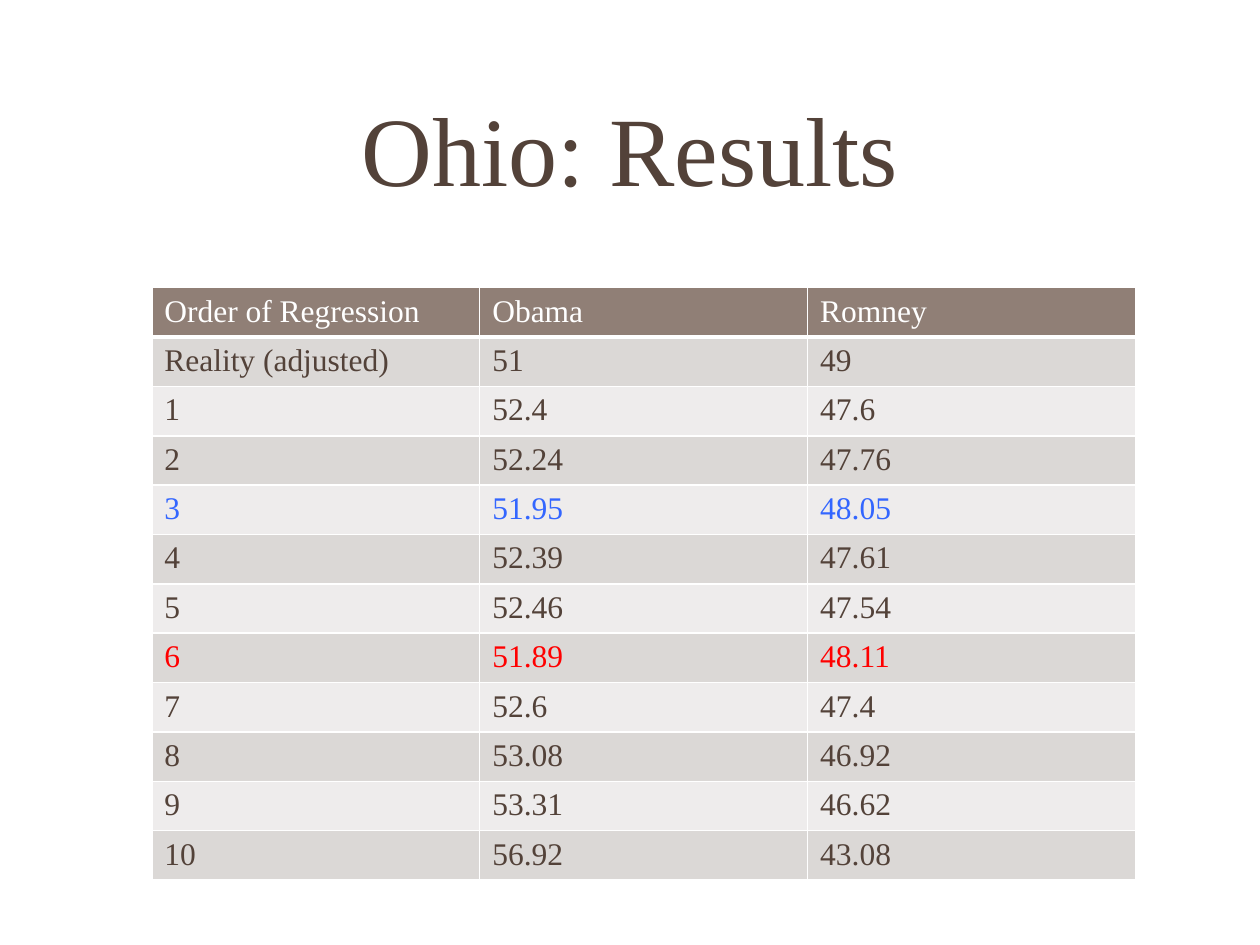
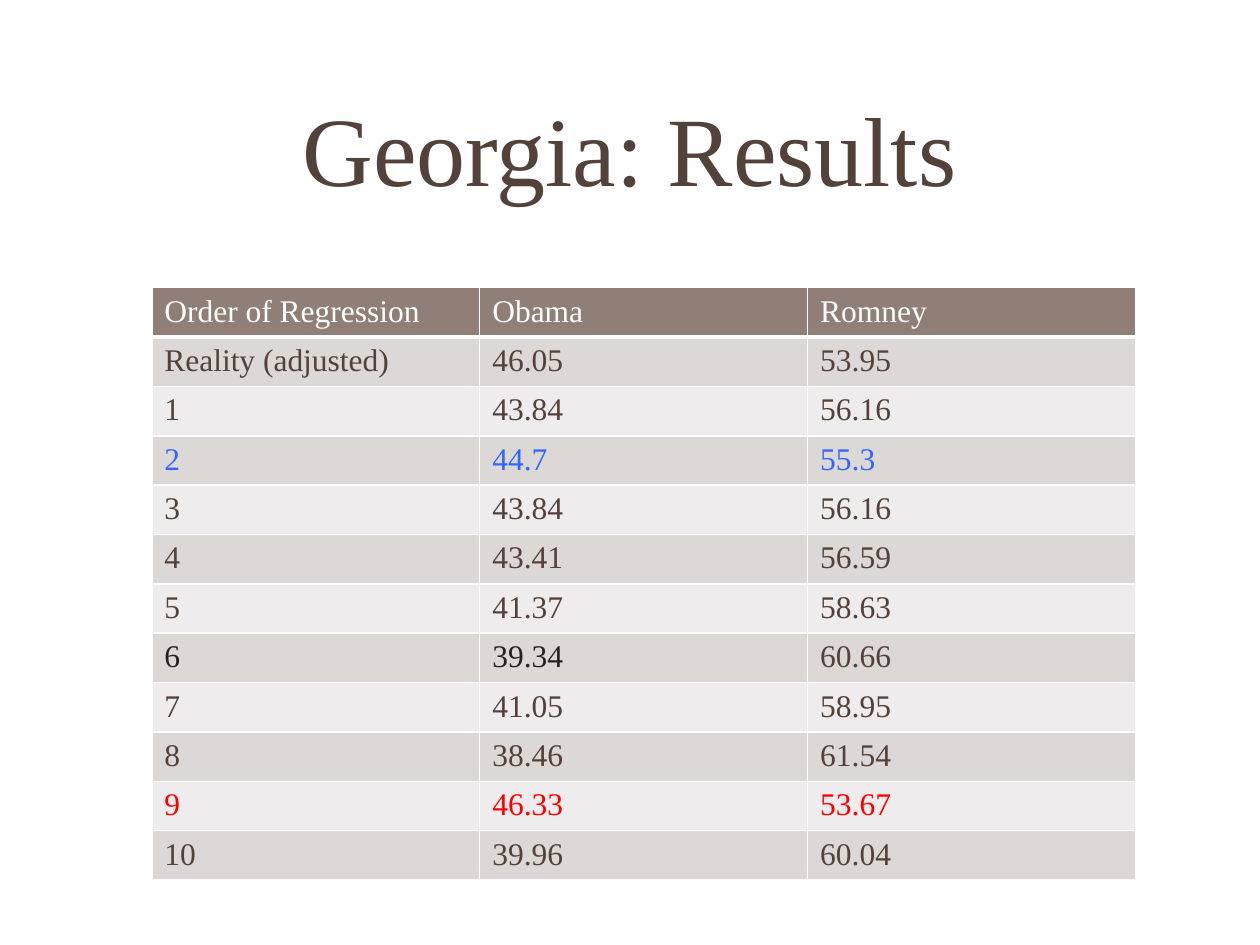
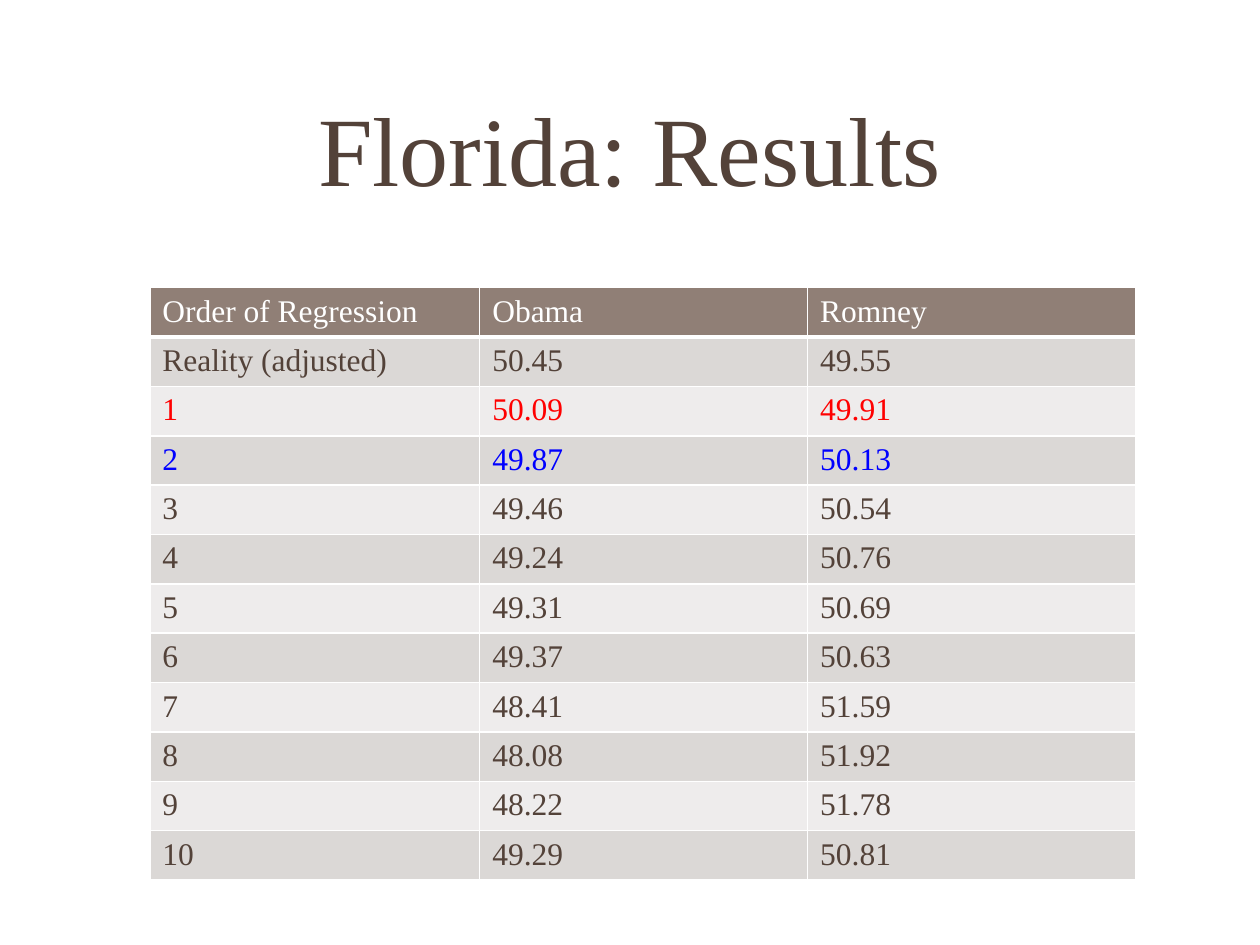
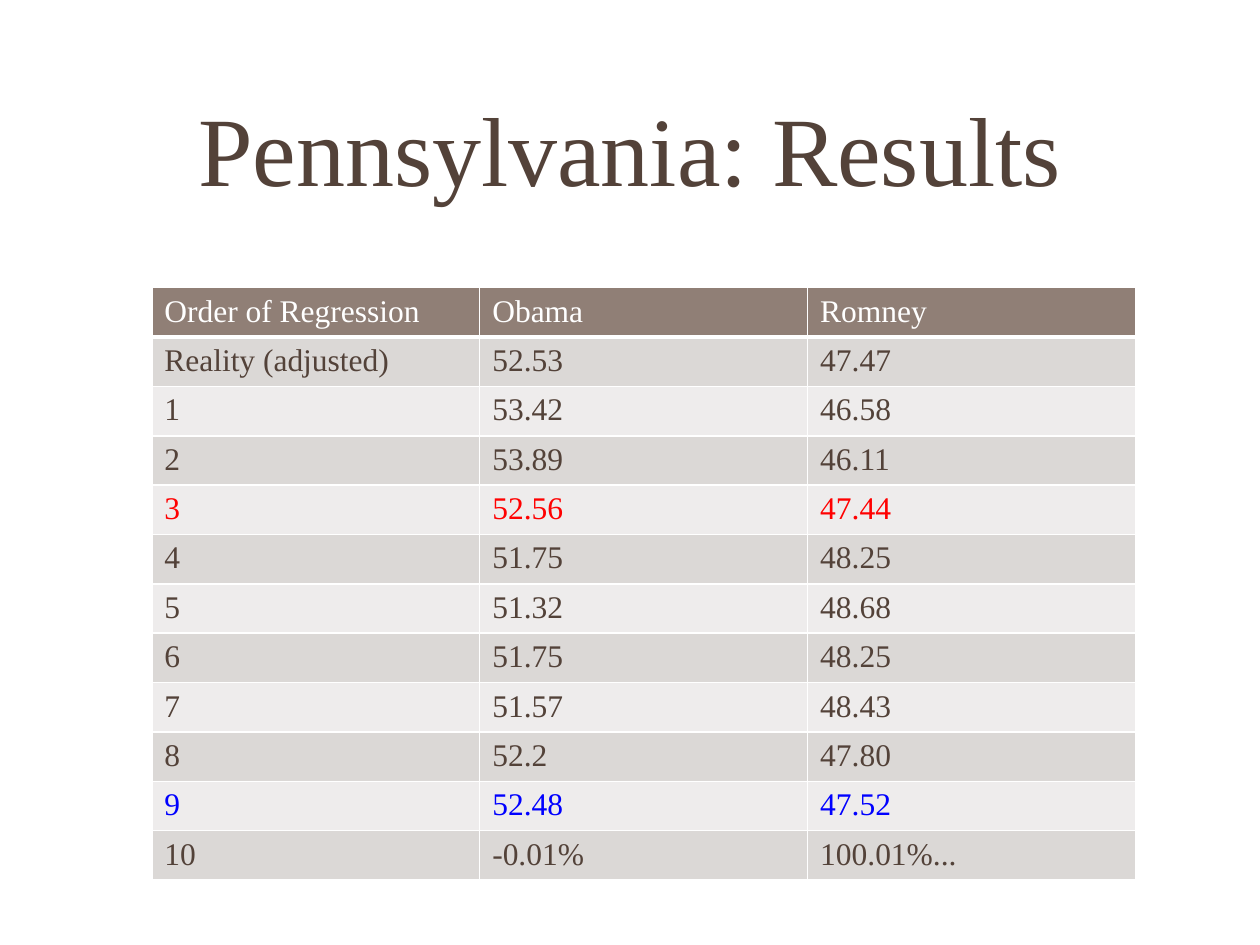
import pptx
import pptx.dml.color
import pptx.enum.text
import pptx.util
from lxml import etree
from pptx.oxml.ns import qn

Cm = pptx.util.Cm
Pt = pptx.util.Pt

COLOURS = {
    "brown": "534239",
    "dark": "2A211D",
    "red": "FF0000",
    "sky": "3366FF",
    "blue": "0000FF",
    "white": "FFFFFF",
    "header": "907F76",
    "odd_row": "DBD8D6",
    "even_row": "EEECEC",
}
FONT = "Times New Roman"
HEADINGS = ("Order of Regression", "Obama", "Romney")
ORDERS = ("Reality (adjusted)", *map(str, range(1, 11)))

STATES = [
    {
        "name": "Ohio",
        "obama": "51 52.4 52.24 51.95 52.39 52.46 51.89 52.6 53.08 53.31 56.92",
        "romney": "49 47.6 47.76 48.05 47.61 47.54 48.11 47.4 46.92 46.62 43.08",
        "marks": {"3": ("sky",) * 3, "6": ("red",) * 3},
        "first_column": 6.61,
    },
    {
        "name": "Georgia",
        "obama": "46.05 43.84 44.7 43.84 43.41 41.37 39.34 41.05 38.46 46.33 39.96",
        "romney": "53.95 56.16 55.3 56.16 56.59 58.63 60.66 58.95 61.54 53.67 60.04",
        "marks": {"2": ("sky",) * 3, "6": ("dark", "dark", "brown"), "9": ("red",) * 3},
        "first_column": 6.61,
    },
    {
        "name": "Florida",
        "obama": "50.45 50.09 49.87 49.46 49.24 49.31 49.37 48.41 48.08 48.22 49.29",
        "romney": "49.55 49.91 50.13 50.54 50.76 50.69 50.63 51.59 51.92 51.78 50.81",
        "marks": {"1": ("red",) * 3, "2": ("blue",) * 3},
        "first_column": 6.65,
    },
    {
        "name": "Pennsylvania",
        "obama": "52.53 53.42 53.89 52.56 51.75 51.32 51.75 51.57 52.2 52.48 -0.01%",
        "romney": "47.47 46.58 46.11 47.44 48.25 48.68 48.25 48.43 47.80 47.52 100.01%...",
        "marks": {"3": ("red",) * 3, "9": ("blue",) * 3},
        "first_column": 6.61,
    },
]

TITLE_BOX = (Cm(2.22), Cm(1.07), Cm(20.96), Cm(3.81))
TABLE_RIGHT = 22.89
TABLE_TOP = Cm(5.8)
ROWS_HEIGHT = Cm(11.94)
FRAME_HEIGHT = Cm(12.19)
VALUE_COLUMN = 6.61


def rgb(name):
    return pptx.dml.color.RGBColor.from_string(COLOURS[name])


def add_span(para, text, size, colour):
    span = para.add_run()
    span.text = text
    span.font.name = FONT
    span.font.size = Pt(size)
    span.font.bold = False
    span.font.color.rgb = rgb(colour)


def add_title(page, text):
    box = page.shapes.title
    box.left, box.top, box.width, box.height = TITLE_BOX
    box.text_frame.vertical_anchor = pptx.enum.text.MSO_ANCHOR.MIDDLE
    para = box.text_frame.paragraphs[0]
    para.alignment = pptx.enum.text.PP_ALIGN.CENTER
    add_span(para, text, 56, "brown")


def set_borders(cell, bottom_width):
    properties = cell._tc.get_or_add_tcPr()
    widths = {"a:lnL": 1, "a:lnR": 1, "a:lnT": 1, "a:lnB": bottom_width}
    for position, (tag, width) in enumerate(widths.items()):
        line = etree.Element(qn(tag), w=str(Pt(width)))
        fill = etree.SubElement(line, qn("a:solidFill"))
        etree.SubElement(fill, qn("a:srgbClr"), val=COLOURS["white"])
        properties.insert(position, line)


def fill_cell(cell, text, text_colour, fill_colour, bottom_width):
    cell.fill.solid()
    cell.fill.fore_color.rgb = rgb(fill_colour)
    set_borders(cell, bottom_width)
    add_span(cell.text_frame.paragraphs[0], text, 18, text_colour)


def add_results(page, state):
    rows = [HEADINGS, *zip(ORDERS, state["obama"].split(), state["romney"].split())]
    widths = (state["first_column"], VALUE_COLUMN, VALUE_COLUMN)
    total = sum(widths)
    frame = page.shapes.add_table(
        len(rows), len(widths), Cm(TABLE_RIGHT - total), TABLE_TOP, Cm(total), ROWS_HEIGHT
    )
    table = frame.table
    table.horz_banding = False
    for column, width in zip(table.columns, widths):
        column.width = Cm(width)
    for row_index, row in enumerate(rows):
        if row_index == 0:
            text_colours, fill_colour, bottom_width = ("white",) * 3, "header", 3
        else:
            text_colours = state["marks"].get(row[0], ("brown",) * 3)
            fill_colour = "odd_row" if row_index % 2 else "even_row"
            bottom_width = 1
        for column_index, (text, colour) in enumerate(zip(row, text_colours)):
            cell = table.cell(row_index, column_index)
            fill_cell(cell, text, colour, fill_colour, bottom_width)
    frame.height = FRAME_HEIGHT


def main():
    deck = pptx.Presentation()
    deck.slide_width, deck.slide_height = Cm(25.4), Cm(19.05)
    title_only = deck.slide_layouts.get_by_name("Title Only")
    for state in STATES:
        page = deck.slides.add_slide(title_only)
        add_title(page, f"{state['name']}: Results")
        add_results(page, state)
    deck.save("out.pptx")


if __name__ == "__main__":
    main()
